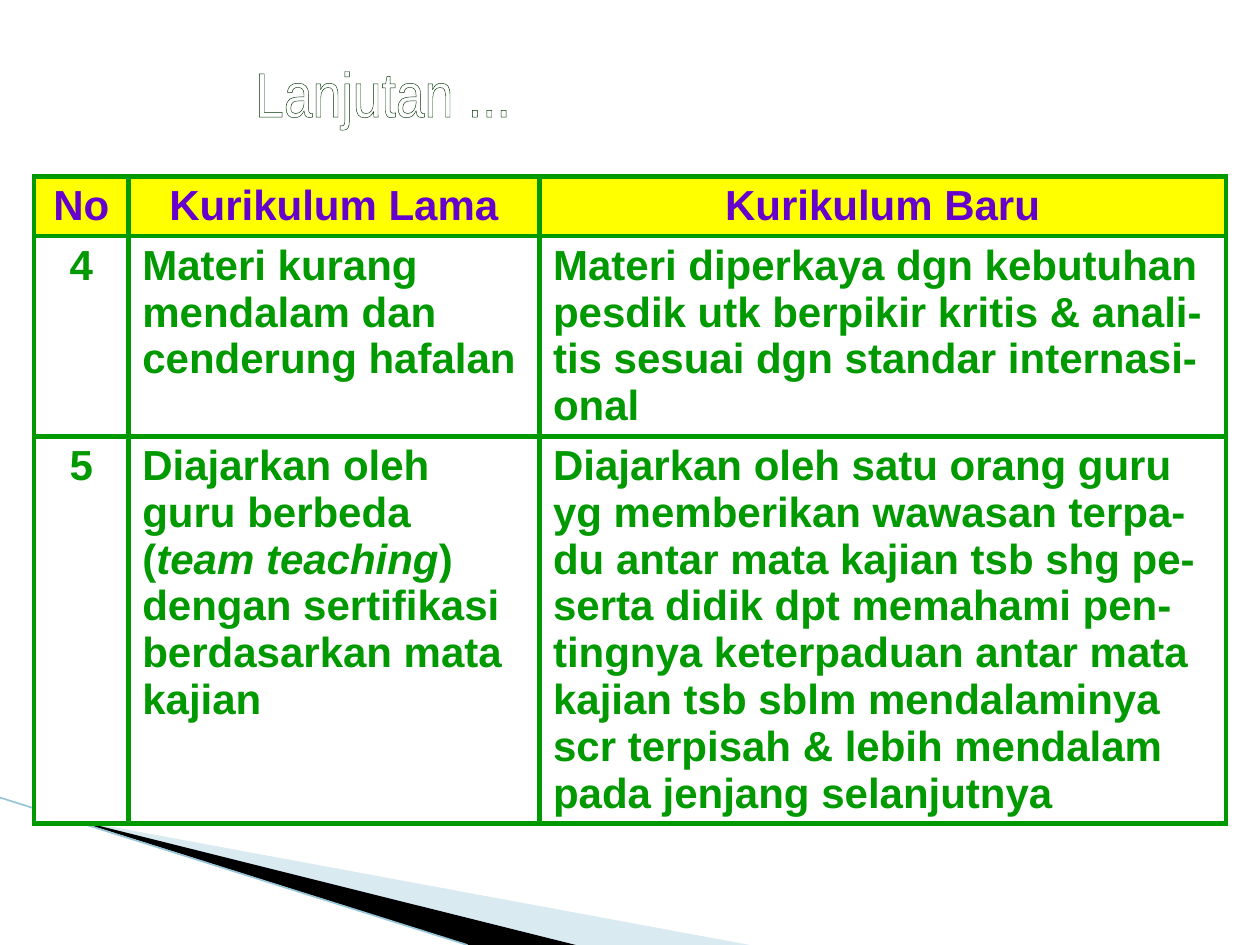
from lxml.etree import SubElement
from pptx import Presentation
from pptx.dml.color import RGBColor
from pptx.enum.shapes import MSO_CONNECTOR
from pptx.enum.text import MSO_ANCHOR, MSO_AUTO_SIZE, PP_ALIGN
from pptx.oxml.ns import qn
from pptx.util import Inches, Pt

GREEN = RGBColor(0x00, 0x99, 0x00)
DARK_GREEN = RGBColor(0x00, 0x33, 0x00)
PURPLE = RGBColor(0x66, 0x00, 0xCC)
YELLOW = RGBColor(0xFF, 0xFF, 0x00)
WHITE = RGBColor(0xFF, 0xFF, 0xFF)
BLACK = RGBColor(0x00, 0x00, 0x00)
PALE_BLUE = RGBColor(0xA0, 0xCB, 0xDC)
LINE_BLUE = RGBColor(0x97, 0xC5, 0xD8)

TITLE = "Lanjutan ..."
ROWS = [
    [["No"], ["Kurikulum Lama"], ["Kurikulum Baru"]],
    [
        ["4"],
        ["Materi kurang mendalam dan cenderung hafalan"],
        ["Materi diperkaya dgn kebutuhan pesdik utk berpikir kritis & "
         "anali-tis sesuai dgn standar internasi-onal"],
    ],
    [
        ["5"],
        ["Diajarkan oleh guru berbeda (", "team teaching",
         ") dengan sertifikasi berdasarkan mata kajian"],
        ["Diajarkan oleh satu orang guru yg memberikan wawasan terpa-du "
         "antar mata kajian tsb shg pe-serta didik dpt memahami pen-tingnya "
         "keterpaduan antar mata kajian tsb sblm mendalaminya scr terpisah "
         "& lebih mendalam pada jenjang selanjutnya"],
    ],
]
ITALIC_TEXT = "team teaching"
COLUMN_WIDTHS = [0.75, 3.26, 5.45]
ROW_HEIGHTS = [0.47, 1.59, 3.07]
WEDGES = [
    ([(0.55, 6.5), (5.95, 7.5), (4.56, 7.5)], PALE_BLUE, 40),
    ([(0.53, 6.49), (4.57, 7.5), (3.72, 7.5)], BLACK, 100),
]


def add_solid_fill(parent, color):
    fill = SubElement(parent, qn("a:solidFill"))
    SubElement(fill, qn("a:srgbClr"), val=str(color))


def add_wedge(page, points, color, opacity):
    corners = [(Inches(x), Inches(y)) for x, y in points]
    builder = page.shapes.build_freeform(*corners[0])
    builder.add_line_segments(corners[1:], close=True)
    wedge = builder.convert_to_shape()
    wedge.shadow.inherit = False
    wedge.line.fill.background()
    wedge.fill.solid()
    wedge.fill.fore_color.rgb = color
    if opacity < 100:
        tint = wedge.fill._xPr.find(qn("a:solidFill"))[0]
        SubElement(tint, qn("a:alpha"), val=str(opacity * 1000))


def add_edge_line(page):
    edge = page.shapes.add_connector(
        MSO_CONNECTOR.STRAIGHT, 0, Inches(6.33), Inches(3.71), Inches(7.5))
    edge.line.color.rgb = LINE_BLUE
    edge.line.width = Pt(0.95)
    SubElement(edge._element.spPr, qn("a:effectLst"))


def format_title(title):
    title.left, title.top = Inches(0.33), Inches(0.42)
    title.width, title.height = Inches(5.42), Inches(0.62)
    frame = title.text_frame
    frame.word_wrap = False
    frame.auto_size = MSO_AUTO_SIZE.NONE
    frame.vertical_anchor = MSO_ANCHOR.MIDDLE
    para = frame.paragraphs[0]
    para.alignment = PP_ALIGN.CENTER
    span = para.add_run()
    span.text = TITLE
    outline = SubElement(span._r.get_or_add_rPr(), qn("a:ln"), w=str(Pt(4.5)))
    add_solid_fill(outline, DARK_GREEN)
    span.font.name = "Arial Narrow"
    span.font.size = Pt(36)
    span.font.color.rgb = WHITE


def format_cell(cell, texts, is_header, is_centered):
    properties = cell._tc.get_or_add_tcPr()
    for side in ("lnL", "lnR", "lnT", "lnB"):
        add_solid_fill(SubElement(properties, qn(f"a:{side}"), w=str(Pt(3))), GREEN)
    cell.fill.solid()
    cell.fill.fore_color.rgb = YELLOW if is_header else WHITE
    cell.margin_left = cell.margin_right = Inches(0.11)
    cell.margin_top = cell.margin_bottom = Inches(0.05)
    para = cell.text_frame.paragraphs[0]
    para.alignment = PP_ALIGN.CENTER if is_centered else PP_ALIGN.LEFT
    for text in texts:
        span = para.add_run()
        span.text = text
        span.font.name = "Arial"
        span.font.size = Pt(24)
        span.font.bold = True
        span.font.italic = text == ITALIC_TEXT
        span.font.color.rgb = PURPLE if is_header else GREEN


def add_comparison_table(page):
    table = page.shapes.add_table(
        len(ROWS), len(COLUMN_WIDTHS), Inches(0.27), Inches(1.4),
        Inches(sum(COLUMN_WIDTHS)), Inches(sum(ROW_HEIGHTS))).table
    table.horz_banding = False
    table.first_row = False
    for column, width in zip(table.columns, COLUMN_WIDTHS):
        column.width = Inches(width)
    for row, height in zip(table.rows, ROW_HEIGHTS):
        row.height = Inches(height)
    for i, row_texts in enumerate(ROWS):
        for j, texts in enumerate(row_texts):
            format_cell(table.cell(i, j), texts, i == 0, i == 0 or j == 0)


def main():
    deck = Presentation()
    deck.slide_width, deck.slide_height = Inches(10), Inches(7.5)
    page = deck.slides.add_slide(deck.slide_layouts[5])
    for points, color, opacity in WEDGES:
        add_wedge(page, points, color, opacity)
    add_edge_line(page)
    format_title(page.shapes.title)
    add_comparison_table(page)
    deck.save("out.pptx")


if __name__ == "__main__":
    main()
